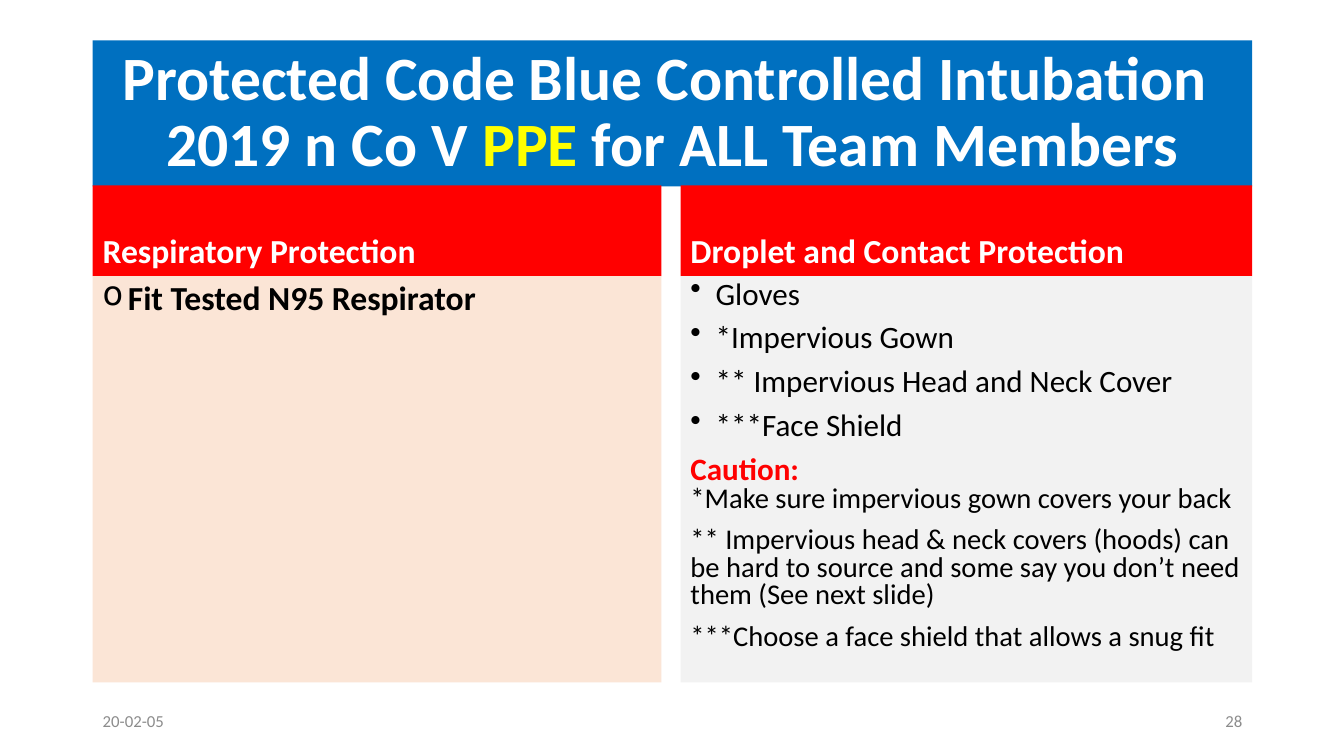
"""Build the slide on protective equipment for a protected code blue intubation."""
from lxml import etree
from pptx import Presentation, util as u
from pptx.dml.color import RGBColor
from pptx.enum import text
from pptx.oxml.ns import qn

COLORS = {"blue": "0070C0", "red": "FF0000", "yellow": "FFFF00", "white": "FFFFFF",
          "black": "000000", "peach": "FBE5D6", "pale": "F2F2F2", "gray": "8C8C8C"}
TOP, MIDDLE, BOTTOM = text.MSO_ANCHOR.TOP, text.MSO_ANCHOR.MIDDLE, text.MSO_ANCHOR.BOTTOM
LEFT, CENTER, RIGHT = text.PP_ALIGN.LEFT, text.PP_ALIGN.CENTER, text.PP_ALIGN.RIGHT
LEFT_COLUMN, RIGHT_COLUMN = (0.92, 5.64), (6.75, 5.67)

deck = Presentation()
deck.slide_width, deck.slide_height = u.Inches(13.33), u.Inches(7.5)
slide = deck.slides.add_slide(deck.slide_layouts[6])


def add_panel(left, top, width, height, anchor, fill=None):
    """Add a wrapped text panel and return its text frame."""
    panel = slide.shapes.add_textbox(*map(u.Inches, (left, top, width, height)))
    if fill:
        panel.fill.solid()
        panel.fill.fore_color.rgb = RGBColor.from_string(COLORS[fill])
    frame = panel.text_frame
    frame.word_wrap = True
    frame.vertical_anchor = anchor
    return frame


def write(paragraph, pieces, spacing=0.9, before=10, align=LEFT, bullet=None):
    """Fill a paragraph with (wording, size, color, bold) pieces."""
    paragraph.alignment = align
    paragraph.line_spacing = spacing
    paragraph.space_before = u.Pt(before)
    for wording, size, color, bold in pieces:
        run = paragraph.add_run()
        run.text = wording.rstrip("\n")
        run.font.name = "Calibri"
        run.font.size = u.Pt(size)
        run.font.bold = bold
        run.font.color.rgb = RGBColor.from_string(COLORS[color])
        if wording.endswith("\n"):
            paragraph.add_line_break()
    if bullet:
        properties = paragraph.runs[0].font and paragraph._p.get_or_add_pPr()
        properties.set("marL", str(u.Inches(0.25)))
        properties.set("indent", str(u.Inches(-0.25)))
        etree.SubElement(properties, qn("a:buChar")).set("char", bullet)


title = add_panel(0.92, 0.4, 11.5, 1.45, MIDDLE, "blue")
write(title.paragraphs[0], [
    ("Protected Code Blue Controlled Intubation \n", 44, "white", True),
    ("2019 n Co V ", 44, "white", True),
    ("PPE ", 44, "yellow", True),
    ("for ALL Team Members", 44, "white", True),
], before=0, align=CENTER)

for (left, width), heading in [(LEFT_COLUMN, "Respiratory Protection"),
                               (RIGHT_COLUMN, "Droplet and Contact Protection")]:
    header = add_panel(left, 1.84, width, 0.9, BOTTOM, "red")
    write(header.paragraphs[0], [(heading, 24, "white", True)])

left, width = LEFT_COLUMN
respiratory = add_panel(left, 2.74, width, 4.03, TOP, "peach")
write(respiratory.paragraphs[0], [("Fit Tested N95 Respirator", 24, "black", True)], bullet="o")

left, width = RIGHT_COLUMN
droplet = add_panel(left, 2.74, width, 4.03, TOP, "pale")
equipment = ["Gloves", "*Impervious Gown", "** Impervious Head and Neck Cover", "***Face Shield"]
cautions = [
    "*Make sure impervious gown covers your back",
    "** Impervious head & neck covers (hoods) can be hard to source "
    "and some say you don’t need them (See next slide)",
    "***Choose a face shield that allows a snug fit",
]
rows = [([(item, 22.2, "black", False)], "•") for item in equipment]
rows += [([(caution, 20.4, "black", False)], None) for caution in cautions]
rows[len(equipment)][0].insert(0, ("Caution: \n", 22.2, "red", True))
for index, (pieces, bullet) in enumerate(rows):
    paragraph = droplet.add_paragraph() if index else droplet.paragraphs[0]
    write(paragraph, pieces, spacing=0.8, bullet=bullet)

for left, label, align in [(0.92, "20-02-05", LEFT), (9.42, "28", RIGHT)]:
    footer = add_panel(left, 6.95, 3, 0.4, MIDDLE)
    write(footer.paragraphs[0], [(label, 12, "gray", False)], spacing=1, before=0, align=align)

deck.save("out.pptx")
